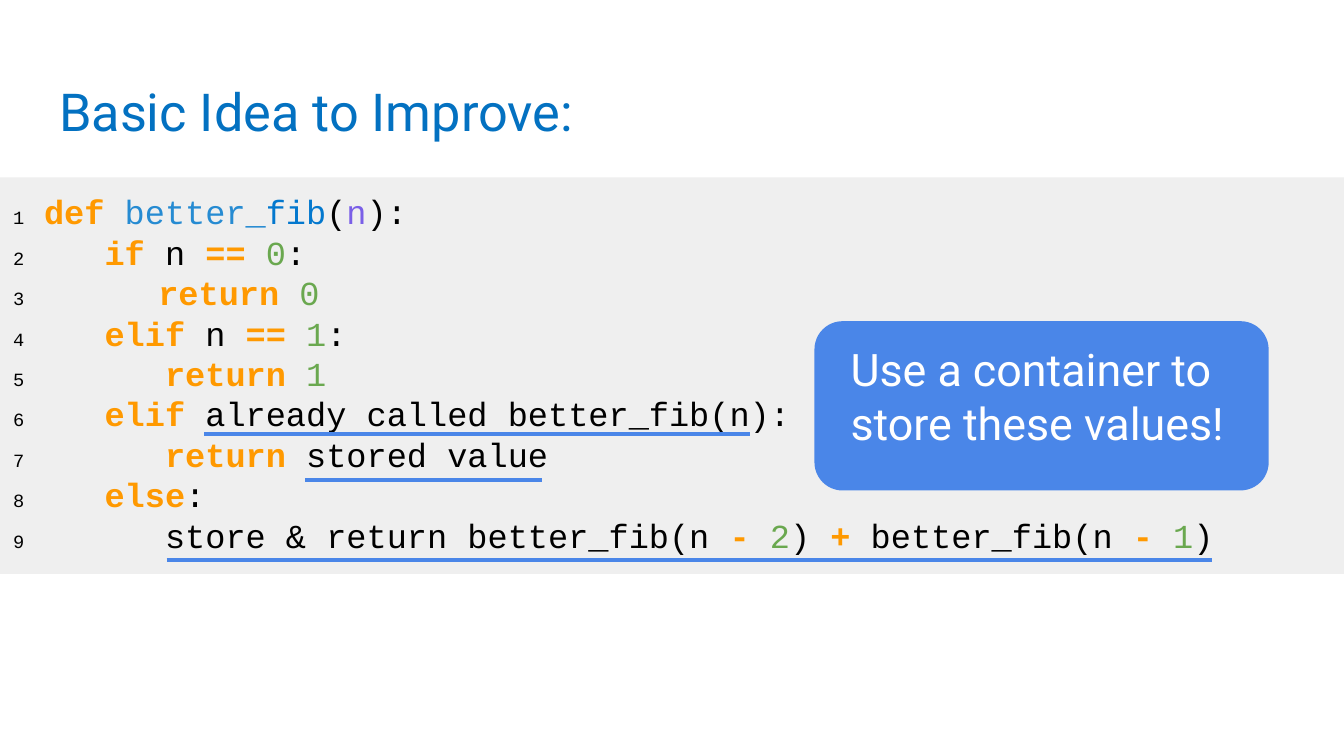
from dataclasses import dataclass

from lxml.etree import SubElement
from pptx import Presentation
from pptx.dml.color import RGBColor
from pptx.enum.shapes import MSO_CONNECTOR, MSO_SHAPE
from pptx.enum.text import MSO_ANCHOR, MSO_AUTO_SIZE, PP_ALIGN
from pptx.oxml.ns import qn
from pptx.util import Inches, Pt


@dataclass(frozen=True)
class Theme:
    """Colours, fonts and type sizes of the slide."""
    title: str = "0371C1"
    panel: str = "EFEFEF"
    accent: str = "4A86E8"
    light: str = "FFFFFF"
    plain: str = "000000"
    key: str = "FF9900"
    num: str = "6AA84F"
    name: str = "268BD2"
    tail: str = "0378CE"
    arg: str = "7A5FE7"
    sans: str = "Roboto"
    mono: str = "Courier New"
    head_size: float = 28
    note_size: float = 24
    code_size: float = 18
    mark_size: float = 10


THEME = Theme()
FRAME = {
    "word_wrap": True, "auto_size": MSO_AUTO_SIZE.NONE,
    "vertical_anchor": MSO_ANCHOR.TOP,
    "margin_left": Inches(0.1), "margin_right": Inches(0.1),
    "margin_top": Inches(0.1), "margin_bottom": Inches(0.1),
}
CODE = [
    (0.23, [("def ", "key"), ("better_", "name"), ("fib", "tail"),
            ("(", "plain"), ("n", "arg"), ("):", "plain")]),
    (0.68, [("if ", "key"), ("n ", "plain"), ("== ", "key"),
            ("0", "num"), (":", "plain")]),
    (1.08, [("return ", "key"), ("0", "num")]),
    (0.68, [("elif", "key"), (" n ", "plain"), ("== ", "key"),
            ("1", "num"), (":", "plain")]),
    (1.13, [("return ", "key"), ("1", "num")]),
    (0.68, [("elif ", "key"), ("already called better_fib(n):", "plain")]),
    (1.13, [("return ", "key"), ("stored value", "plain")]),
    (0.68, [("else", "key"), (":", "plain")]),
    (1.13, [("store & return better_fib(n ", "plain"), ("- ", "key"),
            ("2", "num"), (") ", "plain"), ("+", "key"),
            (" better_fib(n ", "plain"), ("- ", "key"), ("1", "num"),
            (")", "plain")]),
]
RULES = [(1.52, 5.58, 1.91), (1.24, 9.02, 2.85), (2.27, 4.03, 2.25)]


def apply(target, values):
    """Set each named attribute on the target."""
    for name, value in values.items():
        setattr(target, name, value)


def add_run(para, text, font, size, color, bold=False):
    """Append a formatted run to a paragraph."""
    run = para.add_run()
    run.text = text
    apply(run.font, {"name": font, "size": Pt(size), "bold": bold})
    run.font.color.rgb = RGBColor.from_string(color)


def add_block(shapes, kind, box, fill):
    """Add a plain filled shape without line or shadow."""
    block = shapes.add_shape(kind, *map(Inches, box))
    block.shadow.inherit = False
    block.fill.solid()
    block.fill.fore_color.rgb = RGBColor.from_string(fill)
    block.line.fill.background()
    return block


def add_title(slide, box, text):
    """Place and format the title placeholder."""
    title = slide.shapes.title
    apply(title, dict(zip(("left", "top", "width", "height"), map(Inches, box))))
    apply(title.text_frame, FRAME)
    para = title.text_frame.paragraphs[0]
    apply(para, {"alignment": PP_ALIGN.LEFT, "line_spacing": Pt(33.5)})
    add_run(para, text, THEME.sans, THEME.head_size, THEME.title)


def add_rule(slide, start, end, y):
    """Draw one level underline."""
    rule = slide.shapes.add_connector(
        MSO_CONNECTOR.STRAIGHT, *map(Inches, (start, y, end, y)))
    rule.line.color.rgb = RGBColor.from_string(THEME.accent)
    rule.line.width = Pt(2.25)
    SubElement(rule._element.spPr, qn("a:effectLst"))


def add_code(slide, box):
    """Fill a panel with numbered code and underline its key parts."""
    left, top = box[:2]
    panel = add_block(slide.shapes, MSO_SHAPE.RECTANGLE, box, THEME.panel)
    frame = panel.text_frame
    apply(frame, FRAME | {"vertical_anchor": MSO_ANCHOR.MIDDLE,
                          "margin_top": Inches(0.08),
                          "margin_bottom": Inches(0.12)})
    for mark, (indent, parts) in enumerate(CODE, 1):
        para = frame.paragraphs[0] if mark == 1 else frame.add_paragraph()
        apply(para, {"alignment": PP_ALIGN.LEFT, "line_spacing": Pt(21.65)})
        props = para._p.get_or_add_pPr()
        props.set("marL", str(Inches(indent)))
        props.set("indent", str(-Inches(indent)))
        add_run(para, f"{mark}\t", THEME.mono, THEME.mark_size, THEME.plain)
        for text, role in parts:
            add_run(para, text, THEME.mono, THEME.code_size,
                    getattr(THEME, role), role == "key")
    for start, end, drop in RULES:
        add_rule(slide, left + start, left + end, top + drop)


def add_note(slide, box, text):
    """Group a rounded card with its text block."""
    left, top, width, height = box
    group = slide.shapes.add_group_shape()
    add_block(group.shapes, MSO_SHAPE.ROUNDED_RECTANGLE, box, THEME.accent)
    inner = (left + 0.17, top + 0.05, width - 0.36, height - 0.14)
    label = add_block(group.shapes, MSO_SHAPE.RECTANGLE, inner, THEME.accent)
    apply(label.text_frame, FRAME)
    para = label.text_frame.paragraphs[0]
    apply(para, {"alignment": PP_ALIGN.LEFT, "line_spacing": Pt(29)})
    add_run(para, text, THEME.sans, THEME.note_size, THEME.light)


def main():
    """Build and save the slide."""
    deck = Presentation()
    width = Inches(10)
    apply(deck, {"slide_width": width, "slide_height": width * 9 // 16})
    slide = deck.slides.add_slide(deck.slide_layouts[5])
    add_title(slide, (0.34, 0.49, 9.32, 0.63), "Basic Idea to Improve:")
    add_code(slide, (0, 1.32, 10, 2.95))
    add_note(slide, (6.06, 2.39, 3.38, 1.26),
             "Use a container to store these values!")
    deck.save("out.pptx")


if __name__ == "__main__":
    main()
